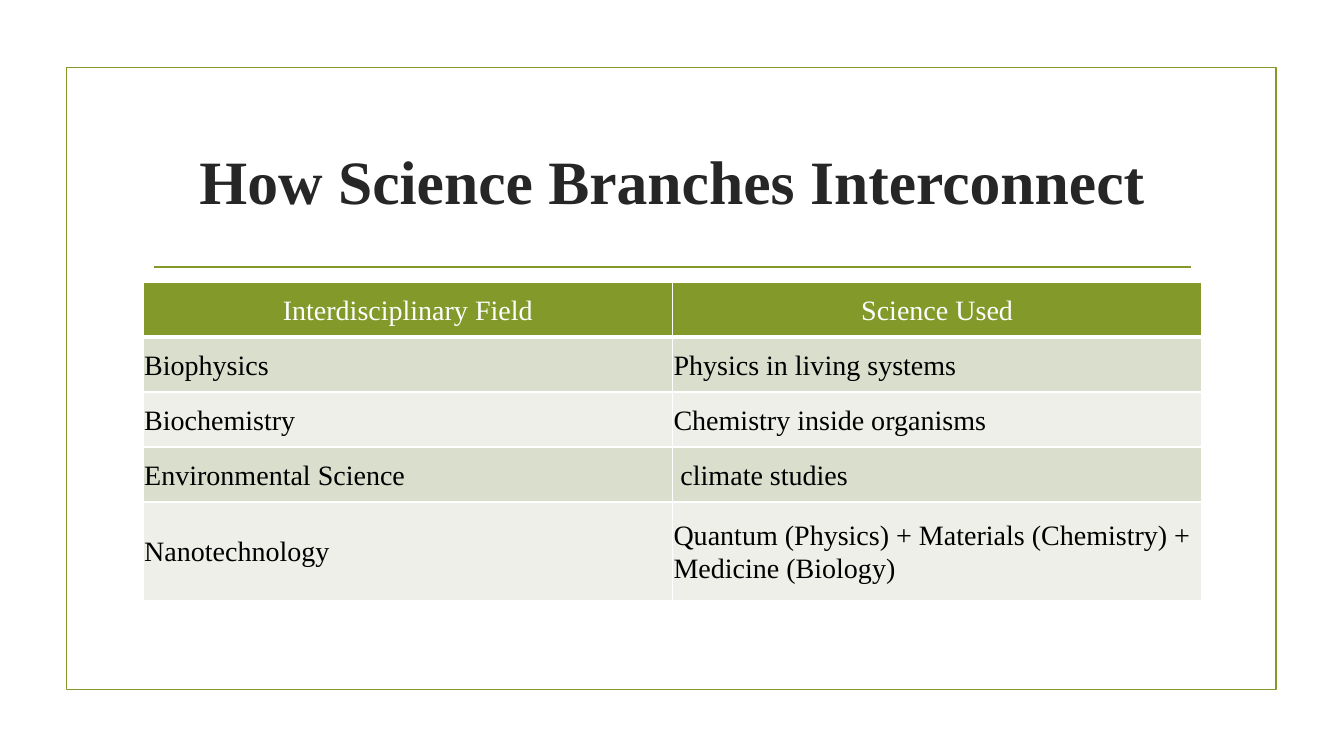
from lxml import etree
from pptx import Presentation
from pptx.dml.color import RGBColor
from pptx.enum.shapes import MSO_CONNECTOR, MSO_SHAPE
from pptx.enum.text import MSO_ANCHOR, PP_ALIGN
from pptx.oxml.ns import qn
from pptx.util import Inches, Pt

LEFT, CENTER = PP_ALIGN.LEFT, PP_ALIGN.CENTER
MIDDLE = MSO_ANCHOR.MIDDLE
RECT, STRAIGHT = MSO_SHAPE.RECTANGLE, MSO_CONNECTOR.STRAIGHT
FONT = "Times New Roman"
COLORS = {
    "accent": "83992A",
    "title": "262626",
    "text": "000000",
    "white": "FFFFFF",
    "band_dark": "D9DECD",
    "band_light": "EDEFE8",
}
FIELDS = [
    ("Interdisciplinary Field", "Science Used"),
    ("Biophysics", "Physics in living systems"),
    ("Biochemistry", "Chemistry inside organisms"),
    ("Environmental Science", " climate studies"),
    ("Nanotechnology",
     "Quantum (Physics) + Materials (Chemistry) + Medicine (Biology)"),
]
ROW_SHARES = [0.1725] * 4 + [0.31]


def rgb(name):
    return RGBColor.from_string(COLORS[name])


def set_font(p, size, color, bold=False):
    p.font.name = FONT
    p.font.size = Pt(size)
    p.font.bold = bold
    p.font.color.rgb = rgb(color)


def style_line(line):
    line.color.rgb = rgb("accent")
    line.width = Pt(1.25)


def add_frame(s, x, y, w, h):
    sp = s.shapes.add_shape(RECT, x, y, w, h)
    sp.shadow.inherit = False
    sp.fill.background()
    style_line(sp.line)


def add_title(s, x, y, w, h, text):
    sp = s.shapes.add_textbox(x, y, w, h)
    tf = sp.text_frame
    tf.word_wrap = True
    tf.vertical_anchor = MIDDLE
    p = tf.paragraphs[0]
    p.text = text
    p.alignment = CENTER
    set_font(p, 44, "title", bold=True)


def add_rule(s, x, y, w):
    line = s.shapes.add_connector(STRAIGHT, x, y, x + w, y)
    style_line(line.line)
    etree.SubElement(line._element.spPr, qn("a:effectLst"))


def set_borders(cell, widths):
    """Cell borders in the order left, right, top, bottom, in points."""
    tc_pr = cell._tc.get_or_add_tcPr()
    for i, (side, width) in enumerate(zip("LRTB", widths)):
        ln = etree.Element(qn(f"a:ln{side}"), w=str(Pt(width)))
        fill = etree.SubElement(ln, qn("a:solidFill"))
        etree.SubElement(fill, qn("a:srgbClr"), val=COLORS["white"])
        tc_pr.insert(i, ln)


def fill_cell(cell, text, row):
    header = row == 0
    band = "accent" if header else "band_dark" if row % 2 else "band_light"
    cell.fill.solid()
    cell.fill.fore_color.rgb = rgb(band)
    cell.vertical_anchor = MIDDLE
    cell.margin_left = cell.margin_right = Inches(0.01)
    cell.margin_top = cell.margin_bottom = Inches(0.01)
    p = cell.text_frame.paragraphs[0]
    p.text = text
    p.alignment = CENTER if header else LEFT
    p.line_spacing = 1.07
    set_font(p, 20, "white" if header else "text")
    set_borders(cell, (1, 1, 3 if row == 1 else 1, 3 if header else 1))


def add_fields_table(s, x, y, w, h):
    cols = len(FIELDS[0])
    table = s.shapes.add_table(len(FIELDS), cols, x, y, w, h).table
    for col in table.columns:
        col.width = w // cols
    for row, (texts, share) in enumerate(zip(FIELDS, ROW_SHARES)):
        table.rows[row].height = int(h * share)
        for col, text in enumerate(texts):
            fill_cell(table.cell(row, col), text, row)


def build_slide(prs):
    s = prs.slides.add_slide(prs.slide_layouts[6])
    left, width = Inches(1.42), Inches(10.5)
    inset = Inches(0.11)
    # Border around the slide
    add_frame(s, Inches(0.66), Inches(0.67), Inches(12), Inches(6.17))
    # Heading and the rule under it
    add_rule(s, left + inset, Inches(2.65), width - 2 * inset)
    add_title(s, left, Inches(1.07), width, Inches(1.43),
              "How Science Branches Interconnect")
    # Table of fields
    add_fields_table(s, left, Inches(2.8), width, Inches(3.16))


def main():
    prs = Presentation()
    prs.slide_width, prs.slide_height = Inches(13.33), Inches(7.5)
    build_slide(prs)
    prs.save("out.pptx")


if __name__ == "__main__":
    main()
